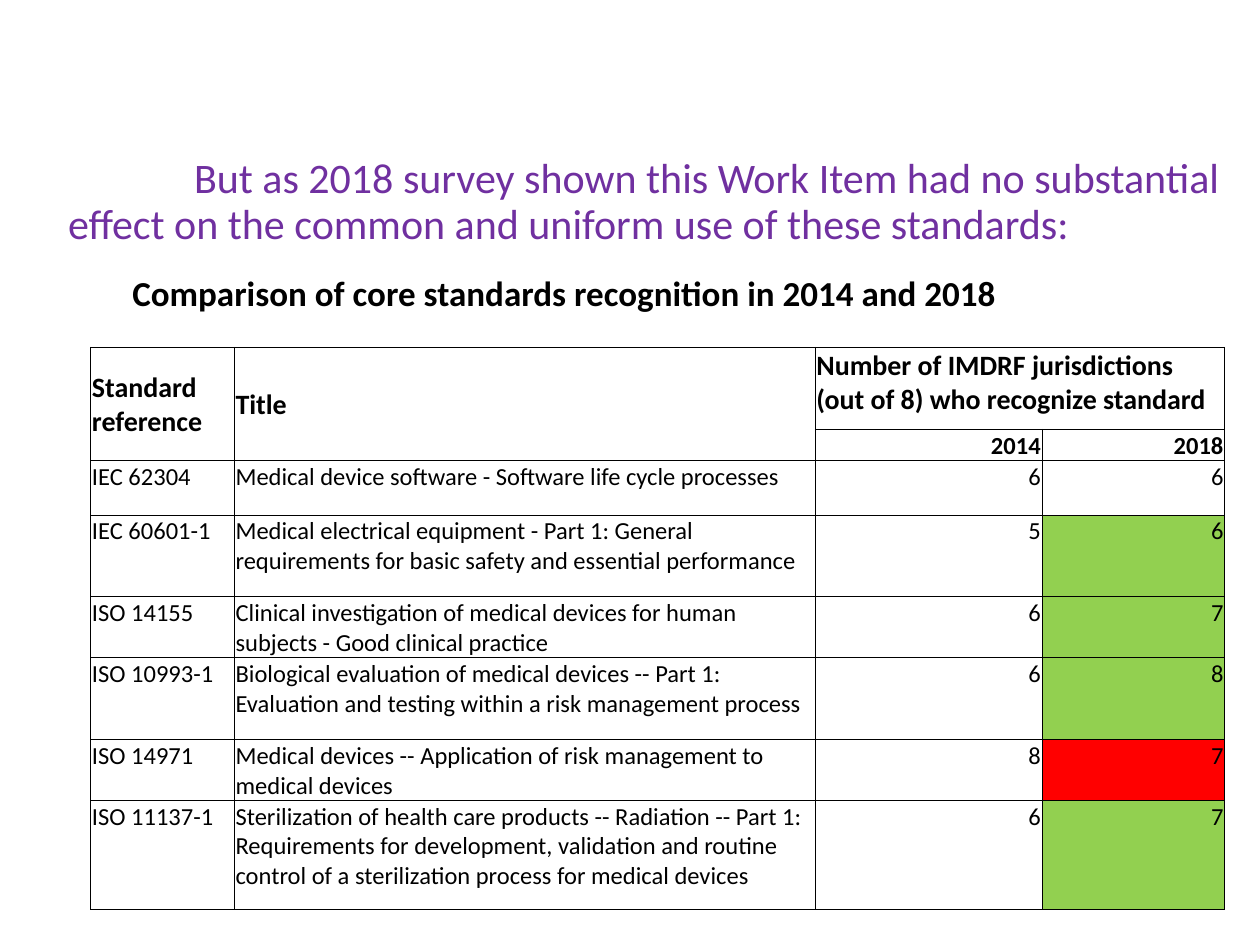
from lxml import etree
from pptx import Presentation
from pptx import util as u
from pptx.dml import color
from pptx.enum import text
from pptx.oxml import ns

COLORS = {"title": "7030A0", "ink": "000000", "more": "92D050", "fewer": "FF0000"}
FONT = "Calibri"
COLUMN_WIDTHS = [1.14, 4.61, 1.8, 1.45]
ROW_HEIGHTS = [0.35, 0.24, 0.65, 0.25, 0.43, 0.65, 0.48, 0.65, 0.48, 0.86]
FIRST_GRID_ROW = 2
FIRST_STANDARD_ROW = 4
STANDARDS = [
    ("IEC 62304", "Medical device software - Software life cycle processes", 6, 6),
    ("IEC 60601-1", "Medical electrical equipment - Part 1: General requirements "
     "for basic safety and essential performance", 5, 6),
    ("ISO 14155", "Clinical investigation of medical devices for human subjects "
     "- Good clinical practice", 6, 7),
    ("ISO 10993-1", "Biological evaluation of medical devices -- Part 1: Evaluation "
     "and testing within a risk management process", 6, 8),
    ("ISO 14971", "Medical devices -- Application of risk management to medical devices", 8, 7),
    ("ISO 11137-1", "Sterilization of health care products -- Radiation -- Part 1: "
     "Requirements for development, validation and routine control of a "
     "sterilization process for medical devices", 6, 7),
]


def rgb(name):
    return color.RGBColor.from_string(COLORS[name])


def set_all(target, values):
    for name, value in values.items():
        setattr(target, name, value)


def add_run(paragraph, words, size, ink="ink", bold=False):
    run = paragraph.add_run()
    run.text = words
    set_all(run.font, {"name": FONT, "size": u.Pt(size), "bold": bold})
    run.font.color.rgb = rgb(ink)


def build_title(slide, left, top, width, height):
    title = slide.shapes.title
    set_all(title, {"left": u.Inches(left), "top": u.Inches(top),
                    "width": u.Inches(width), "height": u.Inches(height)})
    set_all(title.text_frame, {"word_wrap": True, "vertical_anchor": text.MSO_ANCHOR.TOP,
                               "auto_size": text.MSO_AUTO_SIZE.NONE})
    paragraph = title.text_frame.paragraphs[0]
    set_all(paragraph, {"alignment": text.PP_ALIGN.LEFT, "line_spacing": 0.9})
    paragraph._p.get_or_add_pPr().set("indent", str(u.Inches(1)))
    add_run(paragraph, "But as 2018 survey shown this Work Item had no substantial "
            "effect on the common and uniform use of these standards:", 24, "title")


def set_borders(cell, visible_sides):
    properties = cell._tc.get_or_add_tcPr()
    for position, side in enumerate("LRTB"):
        line = etree.Element(ns.qn(f"a:ln{side}"), w=str(u.Pt(0.5)))
        if side in visible_sides:
            fill = etree.SubElement(line, ns.qn("a:solidFill"))
            etree.SubElement(fill, ns.qn("a:srgbClr"), val=COLORS["ink"])
        else:
            etree.SubElement(line, ns.qn("a:noFill"))
        properties.insert(position, line)


def format_cell(cell, row):
    set_all(cell, {"margin_left": u.Inches(0.01), "margin_right": u.Inches(0.01),
                   "margin_top": u.Inches(0.01), "margin_bottom": 0})
    cell.fill.background()
    set_borders(cell, "LRTB" if row >= FIRST_GRID_ROW else "B" * row)
    cell.text_frame.paragraphs[0]._p.get_or_add_endParaRPr().set("sz", "1400")


def fill_cell(cell, words, size=14, bold=False, right=False, anchor=text.MSO_ANCHOR.TOP):
    cell.vertical_anchor = anchor
    paragraph = cell.text_frame.paragraphs[0]
    paragraph.alignment = text.PP_ALIGN.RIGHT if right else text.PP_ALIGN.LEFT
    add_run(paragraph, words, size, bold=bold)


def build_header(table):
    middle = text.MSO_ANCHOR.MIDDLE
    caption = table.cell(0, 0)
    caption.merge(table.cell(0, 3))
    caption.margin_left = u.Inches(0.33)
    fill_cell(caption, "Comparison of core standards recognition in 2014 and 2018",
              20, True, anchor=text.MSO_ANCHOR.BOTTOM)
    for column, words in enumerate(["Standard reference", "Title"]):
        heading = table.cell(2, column)
        heading.merge(table.cell(3, column))
        fill_cell(heading, words, 16, True, anchor=middle)
    table.cell(2, 2).merge(table.cell(2, 3))
    fill_cell(table.cell(2, 2),
              "Number of IMDRF jurisdictions (out of 8) who recognize standard", 16, True)
    for column, year in enumerate(["2014", "2018"], 2):
        fill_cell(table.cell(3, column), year, 14, True, True, middle)


def build_table(slide, left, top, width, height):
    frame = slide.shapes.add_table(len(ROW_HEIGHTS), len(COLUMN_WIDTHS), u.Inches(left),
                                   u.Inches(top), u.Inches(width), u.Inches(height))
    table = frame.table
    set_all(table, {"first_row": False, "horz_banding": False})
    for column, size in zip(table.columns, COLUMN_WIDTHS):
        column.width = u.Inches(size)
    for index, (row, size) in enumerate(zip(table.rows, ROW_HEIGHTS)):
        row.height = u.Inches(size)
        for cell in row.cells:
            format_cell(cell, index)
    build_header(table)
    for row, standard in enumerate(STANDARDS, FIRST_STANDARD_ROW):
        for column, value in enumerate(standard):
            fill_cell(table.cell(row, column), str(value), right=column >= 2)
        before, after = standard[2:]
        if before != after:
            fill = table.cell(row, 3).fill
            fill.solid()
            fill.fore_color.rgb = rgb("more" if after > before else "fewer")


def main():
    presentation = Presentation()
    set_all(presentation, {"slide_width": u.Inches(10), "slide_height": u.Inches(7.5)})
    slide = presentation.slides.add_slide(presentation.slide_layouts[0])
    subtitle = slide.placeholders[1].element
    subtitle.getparent().remove(subtitle)
    build_title(slide, 0.44, 1.2, 9.56, 6.18)
    build_table(slide, 0.72, 2.16, sum(COLUMN_WIDTHS), sum(ROW_HEIGHTS))
    presentation.save("out.pptx")


if __name__ == "__main__":
    main()
